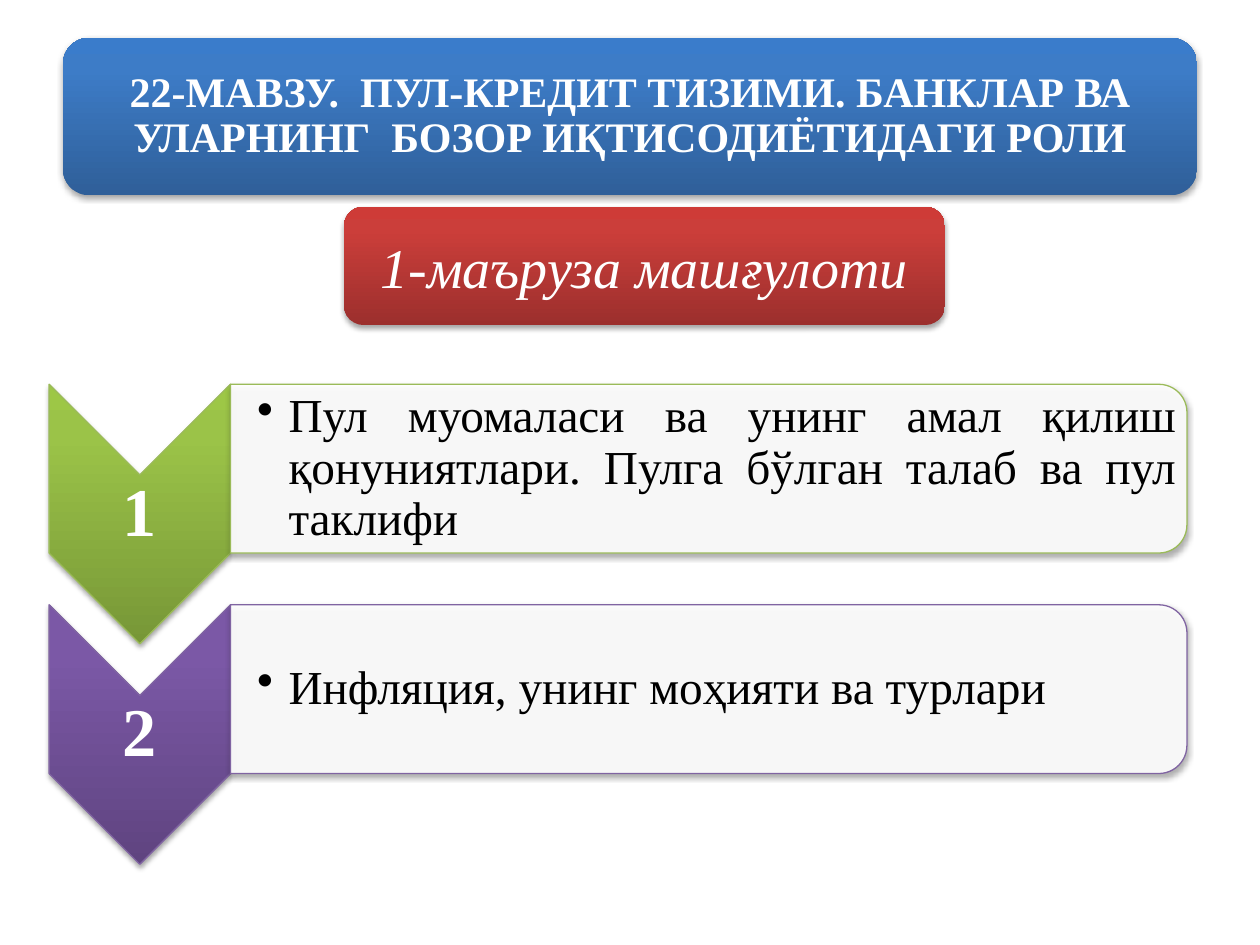
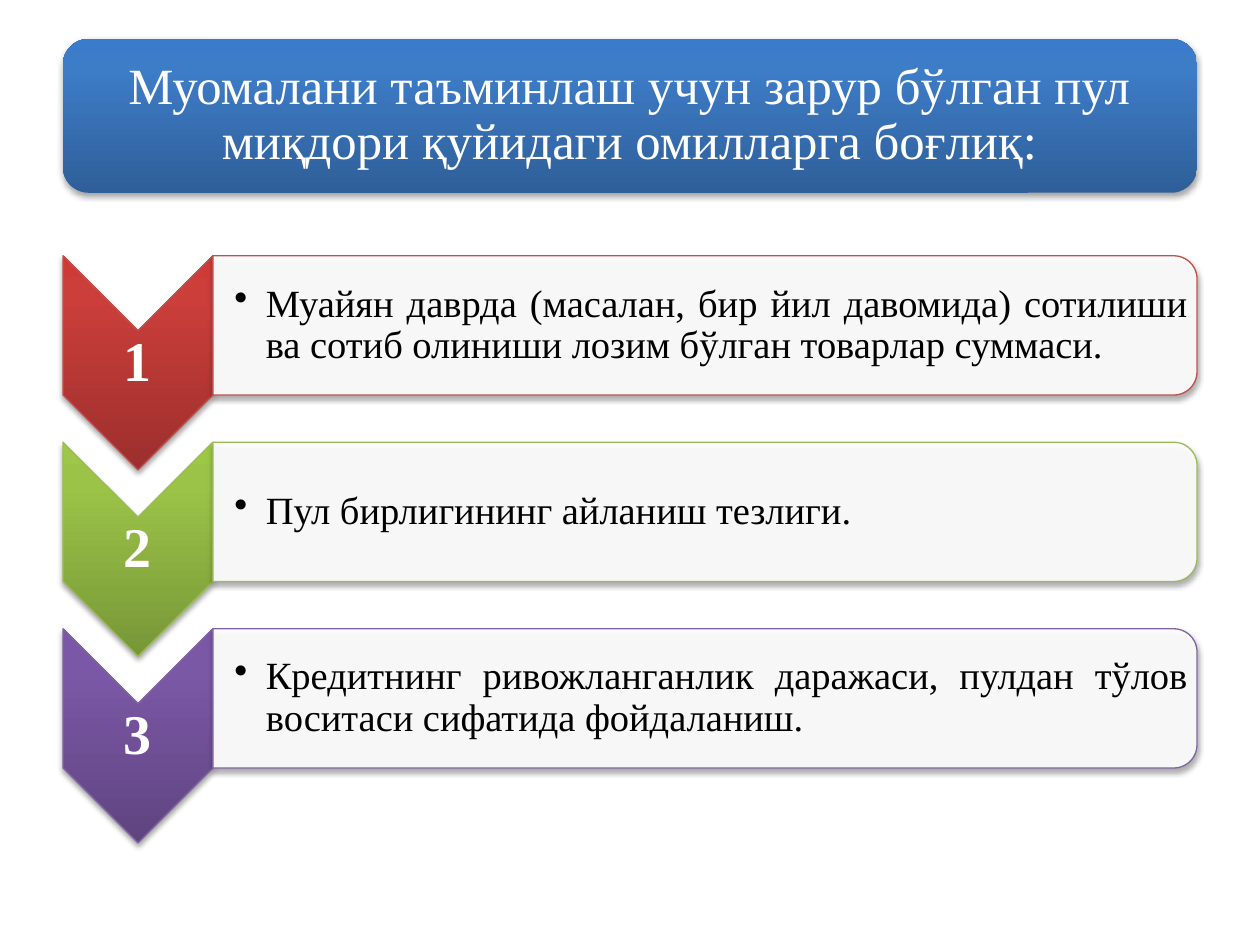
from dataclasses import dataclass

from pptx import Presentation
from pptx.dml.color import RGBColor as RGB
from pptx.enum.shapes import MSO_SHAPE as SHAPE
from pptx.enum.text import MSO_ANCHOR as ANCHOR, PP_ALIGN as ALIGN
from pptx.oxml import parse_xml
from pptx.oxml.ns import nsdecls, qn
from pptx.util import Inches, Pt


@dataclass(frozen=True)
class Accent:
    line: str
    stops: tuple  # dark bottom, bright middle, top


class Theme:
    font = "Times New Roman"
    white, black = "FFFFFF", "000000"
    blue = Accent("4F81BD", ("2F5F99", "3D7CC7", "3A7CCB"))
    red = Accent("C0504D", ("9C2F2D", "CB3E3A", "CE3B37"))
    green = Accent("9BBB59", ("779737", "9BC348", "9DC746"))
    purple = Accent("8064A2", ("5F4480", "7B58A6", "7C57A8"))
    stop_positions = (0, 80, 100)
    topic = {"size": Pt(24), "bold": True}
    heading = {"size": Pt(29)}
    subtitle = {"size": Pt(32), "italic": True}
    line_spacing = 0.9
    line_width = Pt(0.75)


# ---- shared helpers ----
def add_shadow(sp):
    sp.shadow.inherit = False
    effects = sp._element.spPr.find(qn("a:effectLst"))
    effects.append(parse_xml(
        f'<a:outerShdw {nsdecls("a")} blurRad="{Pt(3.1)}" dist="{Pt(1.8)}" '
        'dir="5400000" rotWithShape="0"><a:srgbClr val="000000">'
        '<a:alpha val="35000"/></a:srgbClr></a:outerShdw>'))


def fill_gradient(sp, accent):
    stops = "".join(
        f'<a:gs pos="{pos * 1000}"><a:srgbClr val="{color}"/></a:gs>'
        for pos, color in zip(Theme.stop_positions, accent.stops))
    sp.fill.background()
    spPr = sp._element.spPr
    spPr.replace(spPr.find(qn("a:noFill")), parse_xml(
        f'<a:gradFill {nsdecls("a")} rotWithShape="0"><a:gsLst>{stops}</a:gsLst>'
        '<a:lin ang="16200000" scaled="0"/></a:gradFill>'))


def set_line(sp, accent):
    sp.line.color.rgb = RGB.from_string(accent.line)
    sp.line.width = Theme.line_width


def add_turned(slide, kind, x, y, w, h):
    """Add a shape turned by 90 degrees that covers the box x, y, w, h."""
    sp = slide.shapes.add_shape(kind, Inches(x + (w - h) / 2), Inches(y + (h - w) / 2),
                                Inches(h), Inches(w))
    sp.rotation = 90
    return sp


def write(sp, text, fmt, color=Theme.white, align=ALIGN.CENTER, margins=None,
          spacing=Theme.line_spacing):
    tf = sp.text_frame
    tf.word_wrap = True
    tf.vertical_anchor = ANCHOR.MIDDLE
    for side, margin in (margins or {}).items():
        setattr(tf, f"margin_{side}", Inches(margin))
    p = tf.paragraphs[0]
    p.alignment = align
    p.line_spacing = spacing
    r = p.add_run()
    r.text = text
    for name, value in {"name": Theme.font, **fmt}.items():
        setattr(r.font, name, value)
    r.font.color.rgb = RGB.from_string(color)
    return p


def add_text(slide, box, text, fmt, **options):
    tb = slide.shapes.add_textbox(*map(Inches, box))
    return write(tb, text, fmt, **options)


def all_sides(margin):
    return dict.fromkeys(("left", "top", "right", "bottom"), margin)


def add_bullet(p):
    p.level = 1
    pPr = p._p.get_or_add_pPr()
    pPr.set("marL", str(Inches(0.25)))
    pPr.set("indent", str(-Inches(0.25)))
    pPr.append(parse_xml(f'<a:buChar {nsdecls("a")} char="•"/>'))


# ---- regions ----
def add_panel(slide, box, accent):
    sp = slide.shapes.add_shape(SHAPE.ROUNDED_RECTANGLE, *map(Inches, box))
    fill_gradient(sp, accent)
    sp.line.fill.background()
    add_shadow(sp)
    return sp


def add_title(slide, box, text, fmt, margin):
    add_panel(slide, box, Theme.blue)
    x, y, w, h = box
    inset = h * 0.05
    add_text(slide, (x + inset, y + inset, w - 2 * inset, h - 2 * inset),
             text, fmt, margins=all_sides(margin))


def add_step(slide, box, arrow_w, number, text, accent, number_size, text_size, indent):
    x, y, w, h = box

    # Numbered chevron
    chevron = add_turned(slide, SHAPE.CHEVRON, x, y, arrow_w, h)
    fill_gradient(chevron, accent)
    set_line(chevron, accent)
    add_shadow(chevron)
    add_text(slide, (x, y + arrow_w / 2, arrow_w, h - arrow_w), str(number),
             {"size": Pt(number_size), "bold": True}, margins=all_sides(0.03))

    # Card with rounded right corners
    card_x, card_w, card_h = x + arrow_w, w - arrow_w, h * 0.65
    card = add_turned(slide, SHAPE.ROUND_2_SAME_RECTANGLE, card_x, y, card_w, card_h)
    card.fill.solid()
    card.fill.fore_color.rgb = RGB.from_string(Theme.white)
    color = card._element.spPr.find(qn("a:solidFill"))[0]
    color.append(parse_xml(f'<a:alpha {nsdecls("a")} val="90000"/>'))
    set_line(card, accent)
    add_shadow(card)

    # Card text
    inset = card_h * 0.05
    p = add_text(slide, (card_x, y + inset, card_w - inset, card_h - 2 * inset), text,
                 {"size": Pt(text_size)}, color=Theme.black, align=ALIGN.JUSTIFY,
                 margins={**all_sides(0.02), "left": indent})
    add_bullet(p)


def add_steps(slide, first_box, pitch, steps, **style):
    x, y, w, h = first_box
    for i, (text, accent) in enumerate(steps):
        add_step(slide, (x, y + i * pitch, w, h), number=i + 1,
                 text=text, accent=accent, **style)


# ---- slides ----
def lecture_slide(slide):
    add_title(slide, (0.5, 0.3, 9, 1.25),
              "22-МАВЗУ.  ПУЛ-КРЕДИТ ТИЗИМИ. БАНКЛАР ВА УЛАРНИНГ  БОЗОР "
              "ИҚТИСОДИЁТИДАГИ РОЛИ", Theme.topic, margin=0.1)
    add_steps(slide, (0.39, 3.05, 9.03, 2.06), 1.75, [
        ("Пул муомаласи ва унинг амал қилиш қонуниятлари. Пулга бўлган талаб "
         "ва пул таклифи", Theme.green),
        ("Инфляция, унинг моҳияти ва турлари", Theme.purple),
    ], arrow_w=1.44, number_size=39, text_size=27, indent=0.21)
    subtitle = add_panel(slide, (2.73, 1.64, 4.77, 0.94), Theme.red)
    write(subtitle, "1-маъруза машғулоти", Theme.subtitle, spacing=1.0)


def factors_slide(slide):
    add_title(slide, (0.5, 0.31, 9, 1.22),
              "Муомалани таъминлаш учун зарур бўлган пул миқдори қуйидаги "
              "омилларга боғлиқ:", Theme.heading, margin=0.12)
    add_steps(slide, (0.5, 2.03, 9, 1.7), 1.48, [
        ("Муайян даврда (масалан, бир йил давомида) сотилиши ва сотиб олиниши "
         "лозим бўлган товарлар суммаси.", Theme.red),
        ("Пул бирлигининг айланиш тезлиги.", Theme.green),
        ("Кредитнинг ривожланганлик даражаси, пулдан тўлов воситаси сифатида "
         "фойдаланиш.", Theme.purple),
    ], arrow_w=1.19, number_size=32, text_size=22, indent=0.17)


def main():
    prs = Presentation()
    prs.slide_width, prs.slide_height = Inches(10), Inches(7.5)
    for build in (lecture_slide, factors_slide):
        build(prs.slides.add_slide(prs.slide_layouts[6]))
    prs.save("out.pptx")


if __name__ == "__main__":
    main()
